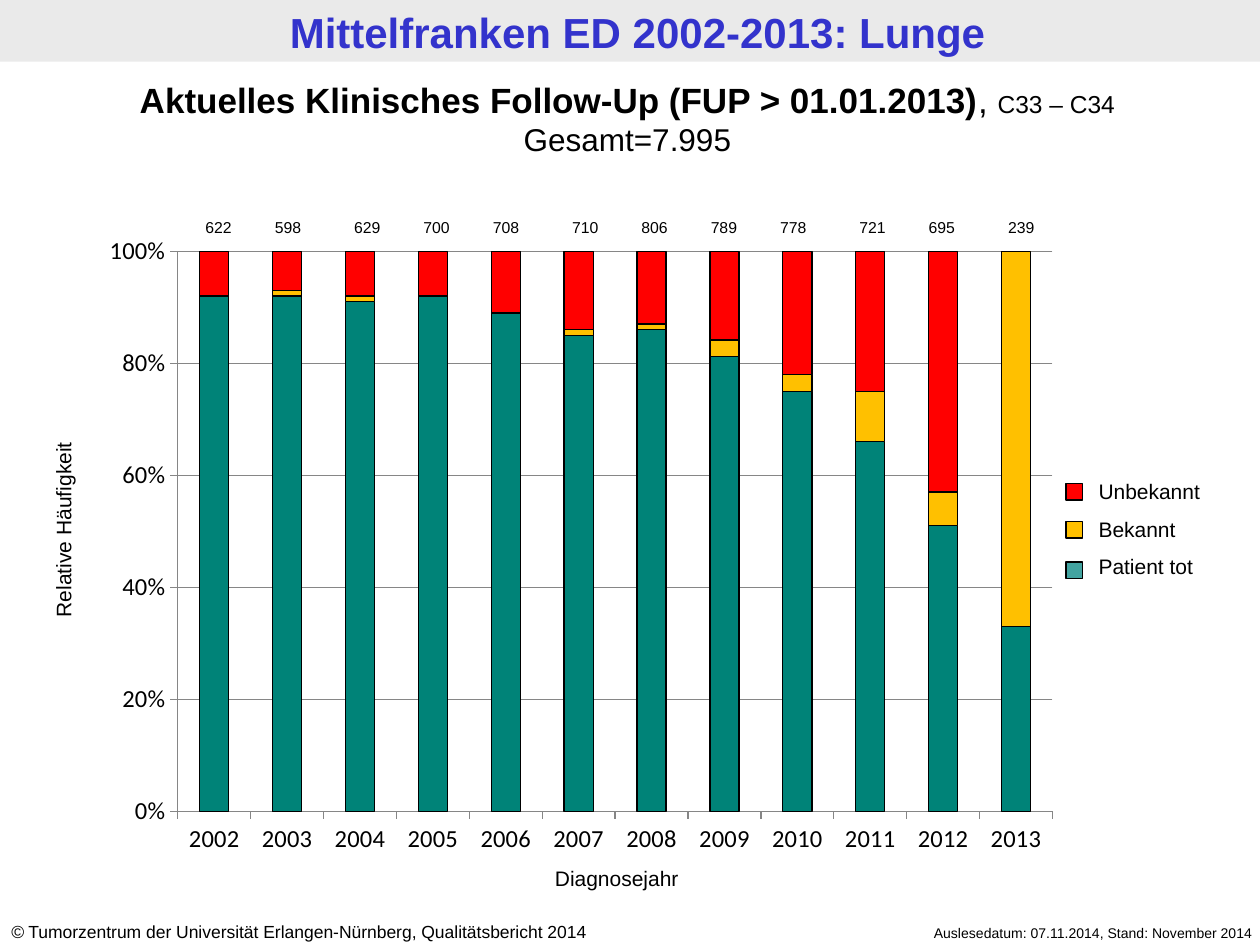
from dataclasses import dataclass

from lxml.etree import SubElement
from pptx import Presentation
from pptx.chart.data import CategoryChartData
from pptx.dml.color import RGBColor
from pptx.enum.chart import XL_CHART_TYPE as ChartType, XL_TICK_MARK as TickMark
from pptx.enum.shapes import MSO_SHAPE as Preset
from pptx.enum.text import MSO_ANCHOR as Anchor, MSO_AUTO_SIZE as AutoSize, PP_ALIGN as Align
from pptx.oxml.ns import qn
from pptx.util import Inches, Pt


@dataclass(frozen=True)
class Theme:
    font: str = "Arial"
    chart_font: str = "Calibri"
    black: str = "000000"
    title: str = "3333CC"
    band: str = "EAEAEA"
    grid: str = "868686"
    dead: str = "008378"
    dead_key: str = "008380"
    known: str = "FFC000"
    unknown: str = "FF0000"
    title_size: int = 24
    heading_size: int = 20
    total_size: int = 18
    axis_size: int = 14
    label_size: int = 12
    source_size: int = 10
    count_size: int = 9
    date_size: int = 8


THEME = Theme()
YEARS = [str(year) for year in range(2002, 2014)]
SERIES = [
    ("Series 1", THEME.dead, (92, 92, 91, 92, 89, 85, 86, 82, 75, 66, 51, 33)),
    ("Series 2", THEME.known, (0, 1, 1, 0, 0, 1, 1, 3, 3, 9, 6, 67)),
    ("Series 3", THEME.unknown, (8, 7, 8, 8, 11, 14, 13, 16, 22, 25, 43, 0)),
]
COUNTS = [
    (622, 1.46), (598, 2.01), (629, 2.64), (700, 3.19), (708, 3.74), (710, 4.37),
    (806, 4.92), (789, 5.47), (778, 6.02), (721, 6.65), (695, 7.2), (239, 7.83),
]
LEGEND = [
    ("Unbekannt", THEME.unknown, 3.84, None),
    ("Bekannt", THEME.known, 4.14, None),
    ("Patient tot", THEME.dead_key, 4.46, 74),
]


def color(value):
    return RGBColor.from_string(value)


def format_font(font, size, shade=THEME.black, name=THEME.font, **styles):
    values = {"name": name, "size": Pt(size), **styles}
    for key, value in values.items():
        setattr(font, key, value)
    font.color.rgb = color(shade)


def write_spans(para, spans, align=Align.CENTER):
    para.alignment = align
    for text, size, styles in spans:
        span = para.add_run()
        span.text = text
        format_font(span.font, size, **styles)


def add_text(page, place, paragraphs, align=Align.CENTER, gap=0, rotation=0):
    box = page.shapes.add_textbox(*map(Inches, place))
    box.rotation = rotation
    frame = box.text_frame
    frame.word_wrap = True
    frame.auto_size = AutoSize.SHAPE_TO_FIT_TEXT
    for index, spans in enumerate(paragraphs):
        para = frame.add_paragraph() if index else frame.paragraphs[0]
        if index and gap:
            para.space_before = Pt(gap)
        write_spans(para, spans, align)


def add_label(page, place, text, size, **options):
    add_text(page, place, [[(text, size, {})]], **options)


def add_rectangle(page, place, fill, outlined=True, opacity=None):
    box = page.shapes.add_shape(Preset.RECTANGLE, *map(Inches, place))
    box.shadow.inherit = False
    box.fill.solid()
    box.fill.fore_color.rgb = color(fill)
    if outlined:
        format_line(box.line, THEME.black)
    else:
        box.line.fill.background()
    if opacity:
        shade = next(box.element.spPr.iter(qn("a:srgbClr")))
        SubElement(shade, qn("a:alpha"), val=str(opacity * 1000))
    return box


def format_line(line, shade):
    line.color.rgb = color(shade)
    line.width = Pt(0.75)


def set_title(page):
    title = page.shapes.title
    place = {"left": 0.06, "top": 0.01, "width": 10, "height": 0.49}
    for key, value in place.items():
        setattr(title, key, Inches(value))
    frame = title.text_frame
    frame.auto_size = AutoSize.NONE
    frame.vertical_anchor = Anchor.MIDDLE
    write_spans(
        frame.paragraphs[0],
        [("Mittelfranken ED 2002-2013: Lunge", THEME.title_size,
          {"shade": THEME.title, "bold": True})],
    )
    band = add_rectangle(page, (0, 0, 10, 0.49), THEME.band, outlined=False)
    title.element.addprevious(band.element)


def set_plot_area(chart, **fractions):
    plot_area = chart.plots[0]._element.getparent()
    layout = plot_area.find(qn("c:layout"))
    if layout is None:
        layout = SubElement(plot_area, qn("c:layout"))
        plot_area.insert(0, layout)
    manual = SubElement(layout, qn("c:manualLayout"))
    settings = {"layoutTarget": "inner", "xMode": "edge", "yMode": "edge", **fractions}
    for key, value in settings.items():
        SubElement(manual, qn(f"c:{key}"), val=str(value))


def add_follow_up_chart(page):
    data = CategoryChartData()
    data.categories = YEARS
    for name, _, values in SERIES:
        data.add_series(name, values)
    place = map(Inches, (0.71, 1.79, 7.8, 5.11))
    chart = page.shapes.add_chart(ChartType.COLUMN_STACKED_100, *place, data).chart
    chart.has_legend = False
    chart.has_title = False
    format_font(chart.font, THEME.axis_size, name=THEME.chart_font)
    set_plot_area(chart, x=0.09, y=0.04, w=0.89, h=0.87)

    plot = chart.plots[0]
    for key, value in {"gap_width": 150, "overlap": 100, "vary_by_categories": False}.items():
        setattr(plot, key, value)
    for series, (_, fill, _) in zip(plot.series, SERIES):
        series.format.fill.solid()
        series.format.fill.fore_color.rgb = color(fill)
        format_line(series.format.line, THEME.black)

    for axis in (chart.category_axis, chart.value_axis):
        axis.major_tick_mark = TickMark.OUTSIDE
        axis.minor_tick_mark = TickMark.NONE
        format_font(axis.tick_labels.font, THEME.axis_size, name=THEME.chart_font)
        format_line(axis.format.line, THEME.grid)
    scale = {"minimum_scale": 0, "maximum_scale": 1, "major_unit": 0.2,
             "has_major_gridlines": True}
    for key, value in scale.items():
        setattr(chart.value_axis, key, value)
    format_line(chart.value_axis.major_gridlines.format.line, THEME.grid)
    chart.value_axis.tick_labels.number_format = "0%"
    chart.value_axis.tick_labels.number_format_is_linked = False


def add_legend(page):
    names = [[(name, THEME.label_size, {})] for name, *_ in LEGEND]
    add_text(page, (8.62, 3.75, 1.42, 0.91), names, align=Align.LEFT, gap=7)
    for _, fill, top, opacity in LEGEND:
        add_rectangle(page, (8.46, top, 0.13, 0.13), fill, opacity=opacity)


def main():
    deck = Presentation()
    deck.slide_width, deck.slide_height = Inches(10), Inches(7.5)
    page = deck.slides.add_slide(deck.slide_layouts[5])
    set_title(page)
    add_label(page, (6.65, 7.29, 3.39, 0.24), "Auslesedatum: 07.11.2014, Stand: November 2014",
              THEME.date_size, align=Align.RIGHT)
    source = [
        ("©", THEME.source_size, {"italic": True}),
        (" Tumorzentrum der Universität Erlangen-Nürnberg, Qualitätsbericht 2014",
         THEME.source_size, {}),
    ]
    add_text(page, (-0.01, 7.26, 5.24, 0.27), [source], align=Align.LEFT)
    add_follow_up_chart(page)
    add_label(page, (-0.7, 4.05, 2.41, 0.31), "Relative Häufigkeit", THEME.label_size, rotation=270)
    add_label(page, (3.77, 6.82, 2.25, 0.31), "Diagnosejahr", THEME.label_size)
    heading = [
        ("Aktuelles Klinisches Follow-Up (FUP > 01.01.2013)", THEME.heading_size, {"bold": True}),
        (", ", THEME.heading_size, {}),
        ("C33 – C34", THEME.axis_size, {}),
    ]
    total = [("Gesamt=7.995", THEME.total_size, {})]
    add_text(page, (-0.04, 0.57, 10.04, 0.74), [heading, total])
    for count, left in COUNTS:
        add_label(page, (left, 1.68, 0.55, 0.25), str(count), THEME.count_size)
    add_legend(page)
    deck.save("out.pptx")


if __name__ == "__main__":
    main()
